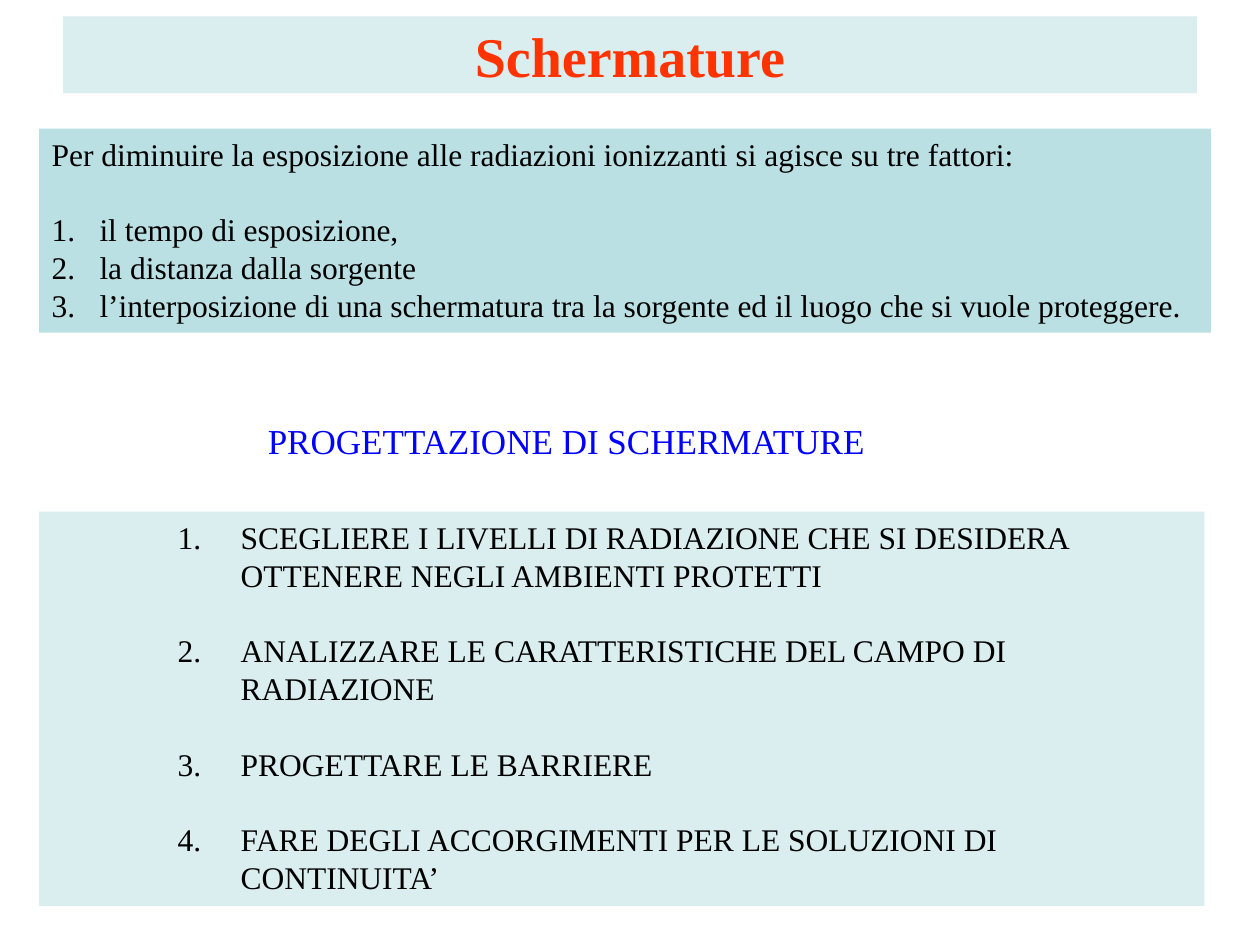
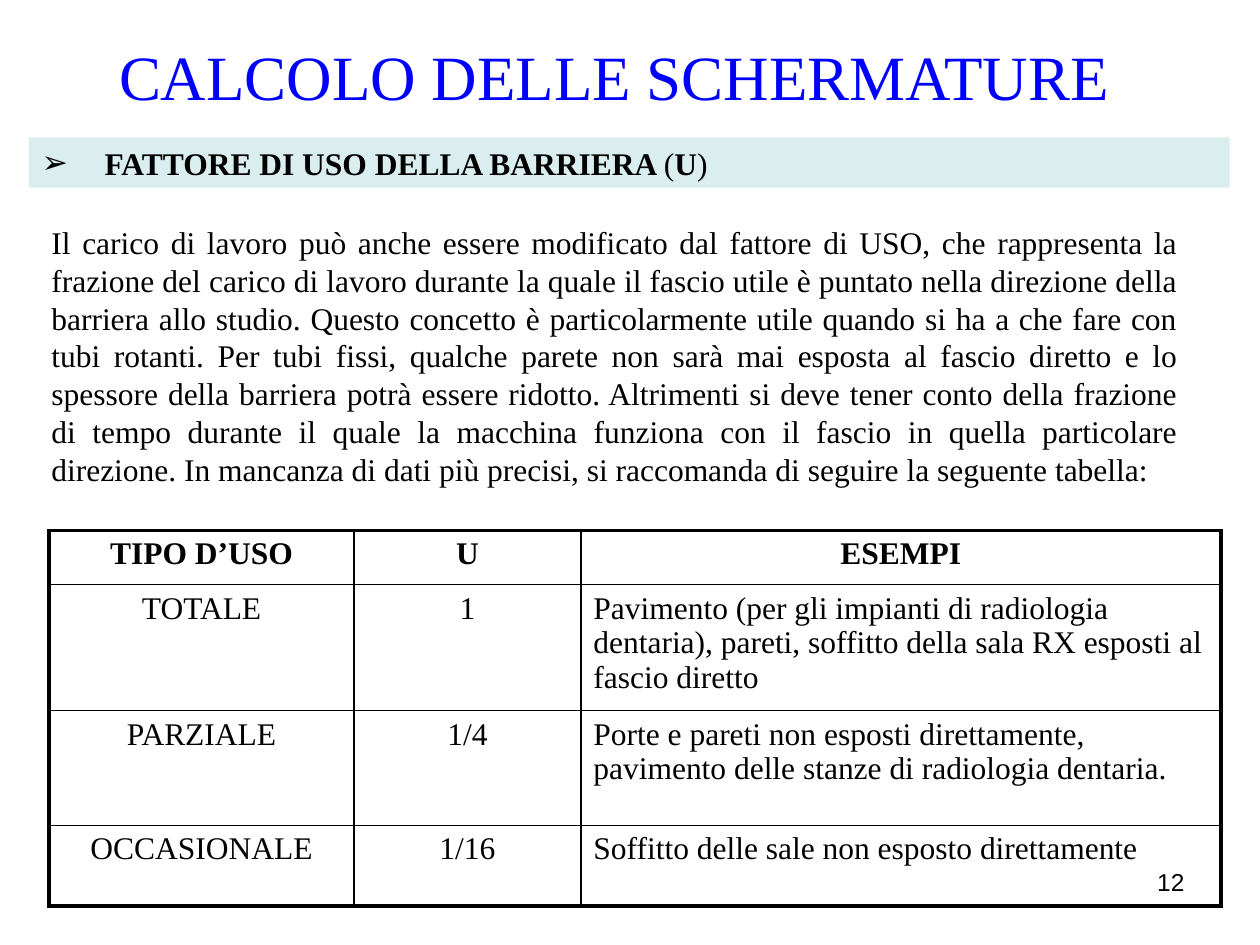
from pptx import Presentation
from pptx.dml.color import RGBColor
from pptx.enum.text import MSO_ANCHOR, MSO_AUTO_SIZE, PP_ALIGN
from pptx.oxml.ns import qn
from pptx.util import Inches, Pt
from lxml import etree

LEFT, CENTER, RIGHT, JUSTIFY = PP_ALIGN.LEFT, PP_ALIGN.CENTER, PP_ALIGN.RIGHT, PP_ALIGN.JUSTIFY
TOP, MIDDLE = MSO_ANCHOR.TOP, MSO_ANCHOR.MIDDLE
NO_AUTOFIT = MSO_AUTO_SIZE.NONE

COLORS = {"pale": "DAEDEF", "aqua": "BBE0E3", "heading": "0000FF",
          "accent": "FF3300", "text": "000000"}
SERIF, SANS = "Times New Roman", "Arial"
BODY_SIZE = 18
LINE_FACTOR = 1.2
NUMBERED = ("buAutoNum", {"type": "arabicPeriod"})
ARROW = ("buChar", {"char": "➢"})
NO_BULLET = ("buNone", {})
THIN, THICK = 1, 2.25


def rgb(name):
    """Look up a palette colour."""
    return RGBColor.from_string(COLORS[name])


def add_run(paragraph, text, size=BODY_SIZE, color="text", bold=False, font=SERIF):
    """Append one formatted run."""
    run = paragraph.add_run()
    run.text = text
    run.font.size, run.font.name, run.font.bold = Pt(size), font, bold
    run.font.color.rgb = rgb(color)


def place(region, box, fill=None, anchor=TOP):
    """Put a text region in its box and return its text frame."""
    region.left, region.top, region.width, region.height = map(Inches, box)
    if fill:
        region.fill.solid()
        region.fill.fore_color.rgb = rgb(fill)
    frame = region.text_frame
    frame.word_wrap, frame.auto_size, frame.vertical_anchor = True, NO_AUTOFIT, anchor
    return frame


def format_paragraph(paragraph, align=LEFT, size=BODY_SIZE, before=0,
                     bullet=NO_BULLET, margin=0, hanging=0):
    """Set alignment, spacing, indents and bullet of a paragraph."""
    paragraph.alignment = align
    paragraph.line_spacing = Pt(size * LINE_FACTOR)
    paragraph.space_before, paragraph.space_after = Pt(before), Pt(0)
    properties = paragraph._p.get_or_add_pPr()
    properties.set("marL", str(Inches(margin)))
    properties.set("indent", str(-Inches(hanging)))
    tag, attributes = bullet
    etree.SubElement(properties, qn(f"a:{tag}"), attributes)


def write_line(frame, text, align=CENTER, size=BODY_SIZE, **font):
    """Fill a frame with a single paragraph."""
    paragraph = frame.paragraphs[0]
    format_paragraph(paragraph, align, size)
    add_run(paragraph, text, size, **font)


def write_list(frame, items, intro=None, gap=0, **layout):
    """Write numbered items, after an optional introduction."""
    paragraph = frame.paragraphs[0]
    if intro:
        format_paragraph(paragraph, layout.get("align", LEFT))
        add_run(paragraph, intro)
    for position, item in enumerate(items):
        if intro or position:
            paragraph = frame.add_paragraph()
        before = BODY_SIZE * LINE_FACTOR if (position and gap) or (intro and not position) else 0
        format_paragraph(paragraph, before=before, bullet=NUMBERED, **layout)
        add_run(paragraph, item)


def add_label(slide, box, text, **style):
    """Add a plain text box holding one paragraph."""
    label = slide.shapes.add_textbox(*map(Inches, box))
    write_line(place(label, box), text, **style)


def set_borders(cell, widths):
    """Draw the left, right, top and bottom borders of a cell."""
    properties = cell._tc.get_or_add_tcPr()
    for position, (side, width) in enumerate(zip("LRTB", widths)):
        line = etree.Element(qn(f"a:ln{side}"), w=str(Pt(width)))
        fill = etree.SubElement(line, qn("a:solidFill"))
        etree.SubElement(fill, qn("a:srgbClr"), val=COLORS["text"])
        properties.insert(position, line)


def add_use_table(slide, box, columns, heights, rows):
    """Add the use-factor table with a thick outer frame."""
    table = slide.shapes.add_table(len(rows), len(columns), *map(Inches, box)).table
    table.first_row = table.horz_banding = False
    for column, width in zip(table.columns, columns):
        column.width = Inches(width)
    last_row, last_column = len(rows) - 1, len(columns) - 1
    for r, (values, height) in enumerate(zip(rows, heights)):
        table.rows[r].height = Inches(height)
        for c, value in enumerate(values):
            cell = table.cell(r, c)
            cell.fill.background()
            outer = (c == 0, c == last_column, r == 0, r == last_row)
            set_borders(cell, [THICK if edge else THIN for edge in outer])
            paragraph = cell.text_frame.paragraphs[0]
            paragraph.alignment = LEFT if r and c == last_column else CENTER
            add_run(paragraph, value, bold=r == 0)


def build_shielding(prs):
    """Build the slide on the factors and design of shielding."""
    slide = prs.slides.add_slide(prs.slide_layouts[3])
    title, factors, steps = slide.placeholders
    write_line(place(title, (0.5, 0.13, 9, 0.61), "pale", MIDDLE), "Schermature",
               size=32, color="accent", bold=True)
    write_list(
        place(factors, (0.31, 1.02, 9.3, 1.62), "aqua"),
        ["il tempo di esposizione,",
         "la distanza dalla sorgente",
         "l’interposizione di una schermatura tra la sorgente ed il luogo che si vuole proteggere."],
        intro="Per diminuire la esposizione alle radiazioni ionizzanti si agisce su tre fattori:",
        align=JUSTIFY, margin=0.38, hanging=0.38)
    add_label(slide, (0.94, 3.28, 7.11, 0.44), "PROGETTAZIONE DI SCHERMATURE",
              size=20, color="heading")
    write_list(
        place(steps, (0.31, 4.06, 9.25, 3.13), "pale"),
        ["SCEGLIERE I LIVELLI DI RADIAZIONE CHE SI DESIDERA OTTENERE NEGLI AMBIENTI PROTETTI",
         "ANALIZZARE LE CARATTERISTICHE DEL CAMPO DI RADIAZIONE",
         "PROGETTARE LE BARRIERE",
         "FARE DEGLI ACCORGIMENTI PER LE SOLUZIONI DI CONTINUITA’"],
        gap=1, margin=1.5, hanging=0.5)


def build_use_factor(prs):
    """Build the slide on the barrier use factor."""
    slide = prs.slides.add_slide(prs.slide_layouts[1])
    title, topic = slide.placeholders
    write_line(place(title, (0, 0.25, 9.75, 0.7)), "CALCOLO DELLE SCHERMATURE",
               size=36, color="heading")
    heading = place(topic, (0.23, 1.09, 9.53, 0.4), "pale").paragraphs[0]
    format_paragraph(heading, bullet=ARROW, margin=0.5, hanging=0.5)
    for text, bold in (("FATTORE DI USO DELLA BARRIERA ", True), ("(", False),
                       ("U", True), (")", False)):
        add_run(heading, text, bold=bold)
    add_label(slide, (7.17, 6.83, 2.33, 0.52), "12", align=RIGHT, size=14, font=SANS)
    add_use_table(
        slide, (0.39, 4.21, 9.3, 2.98), (2.42, 1.8, 5.08), (0.43, 1, 0.91, 0.64),
        [("TIPO D’USO", "U", "ESEMPI"),
         ("TOTALE", "1", "Pavimento (per gli impianti di radiologia dentaria), pareti, "
                         "soffitto della sala RX esposti al fascio diretto"),
         ("PARZIALE", "1/4", "Porte e pareti non esposti direttamente, "
                             "pavimento delle stanze di radiologia dentaria."),
         ("OCCASIONALE", "1/16", "Soffitto delle sale non esposto direttamente")])
    add_label(
        slide, (0.31, 1.72, 9.14, 2.22),
        "Il carico di lavoro può anche essere modificato dal fattore di USO, che rappresenta la "
        "frazione del carico di lavoro durante la quale il fascio utile è puntato nella direzione "
        "della barriera allo studio. Questo concetto è particolarmente utile quando si ha a che "
        "fare con tubi rotanti. Per tubi fissi, qualche parete non sarà mai esposta al fascio "
        "diretto e lo spessore della barriera potrà essere ridotto. Altrimenti si deve tener "
        "conto della frazione di tempo durante il quale la macchina funziona con il fascio in "
        "quella particolare direzione. In mancanza di dati più precisi, si raccomanda di seguire "
        "la seguente tabella:", align=JUSTIFY)


def main():
    """Build and save the presentation."""
    prs = Presentation()
    prs.slide_width, prs.slide_height = Inches(10), Inches(7.5)
    build_shielding(prs)
    build_use_factor(prs)
    prs.save("out.pptx")


if __name__ == "__main__":
    main()
